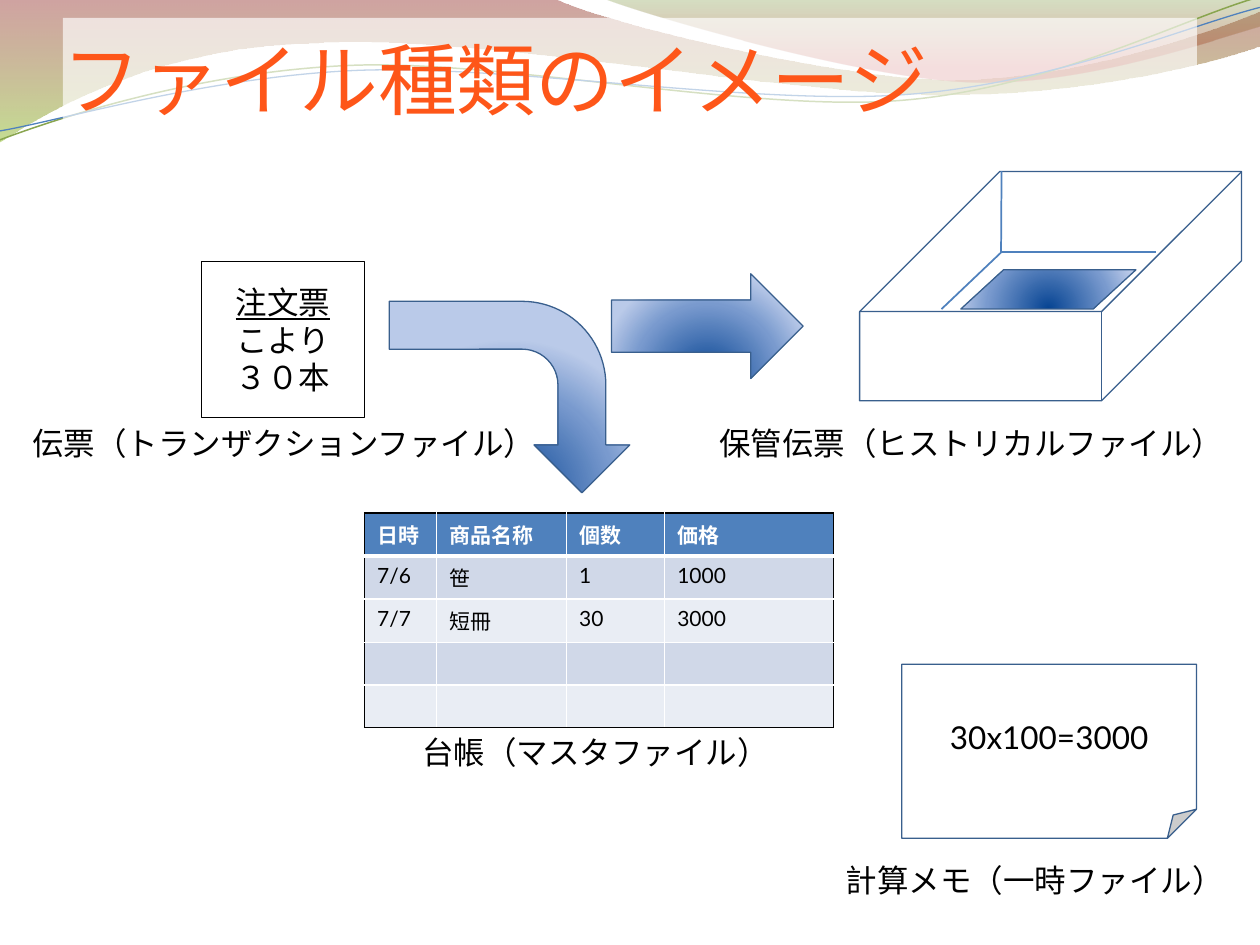
from lxml import etree
from pptx import Presentation
from pptx.dml.color import RGBColor
from pptx.enum.shapes import MSO_CONNECTOR, MSO_SHAPE
from pptx.enum.text import MSO_ANCHOR, MSO_AUTO_SIZE, PP_ALIGN
from pptx.oxml import parse_xml
from pptx.oxml.ns import qn
from pptx.util import Cm, Pt

CENTER, LEFT = PP_ALIGN.CENTER, PP_ALIGN.LEFT
MIDDLE, BOTTOM = MSO_ANCHOR.MIDDLE, MSO_ANCHOR.BOTTOM
NAMESPACE = "http://schemas.openxmlformats.org/drawingml/2006/main"
BODY_FONT, TITLE_FONT = "Lato", "Noto Sans CJK JP"
COLORS = {
    "title": "FE5619", "black": "000000", "white": "FFFFFF",
    "outline": "395F8D", "blue": "4F81BD", "green": "89A54F",
    "dark_band": "D0D8E8", "light_band": "E9EDF4",
}
WAVE_GRADIENTS = {
    "back": [(0, "973330", 45), (100, "95C238", 55)],
    "front": [(0, "769537", 30), (80, "BE3330", 45)],
}
GLOW_GRADIENT = [(0, "064493", 100), (68, "799ACE", 100), (100, "BACAE9", 100)]
DOWNWARD = '<a:lin ang="5400000" scaled="0"/>'
FROM_BELOW = ('<a:path path="circle"><a:fillToRect l="50000" t="130000" '
              'r="50000" b="-30000"/></a:path>')
BACK_WAVE = [
    (0, 0), (11.18, -0.03), (12.09, 0.43, 16.87, 1.6, 19.25, 1.6),
    (21.67, 1.6, 24.33, 0.66, 25.4, 0.23), (25.43, 0.91),
    (24.97, 1.12, 22.1, 1.93, 18.95, 1.91), (15.8, 1.91, 9.7, 0.71, 6.53, 0.86),
    (3.25, 0.91, 1.17, 2.11, -0.03, 2.87), (0, 0),
]
FRONT_WAVE = [
    (12.17, -0.03), (12.93, 0.28, 17.32, 1.57, 19.53, 1.65),
    (21.74, 1.75, 24.41, 0.81, 25.4, 0.53), (25.4, 0), (12.17, -0.03),
]
GREEN_WAVE = [
    (0, 2.82), (1.22, 2.36, 4.01, 1.45, 7.04, 1.32),
    (10.03, 1.19, 15.06, 2.26, 18.11, 2.03), (21.16, 1.8, 23.83, 0.38, 25.35, -0.05),
]
BLUE_WAVE = [
    (0, 2.64), (1.19, 2.44, 4.17, 1.55, 7.19, 1.42),
    (10.24, 1.3, 15.16, 2.13, 18.21, 1.91), (21.23, 1.7, 23.9, 0.53, 25.4, 0.15),
]
LEDGER = [
    ["日時", "商品名称", "個数", "価格"],
    ["7/6", "笹", "1", "1000"],
    ["7/7", "短冊", "30", "3000"],
    [""] * 4,
    [""] * 4,
]
LEDGER_WIDTHS = [1.45, 2.62, 1.98, 3.4]


def rgb(name):
    """Return a named colour."""
    return RGBColor.from_string(COLORS[name])


def set_gradient(shape, stops, direction):
    """Fill a shape with a gradient of (position, colour, opacity) stops."""
    stop_xml = "".join(
        f'<a:gs pos="{position * 1000}"><a:srgbClr val="{color}">'
        f'<a:alpha val="{opacity * 1000}"/></a:srgbClr></a:gs>'
        for position, color, opacity in stops)
    shape.fill.background()
    empty_fill = shape._element.spPr.find(qn("a:noFill"))
    empty_fill.getparent().replace(empty_fill, parse_xml(
        f'<a:gradFill xmlns:a="{NAMESPACE}" rotWithShape="1">'
        f'<a:gsLst>{stop_xml}</a:gsLst>{direction}</a:gradFill>'))


def set_outline(shape, color, width=0.75):
    """Give a shape a plain outline, or none, and no shadow."""
    shape.shadow.inherit = False
    if color:
        shape.line.color.rgb = rgb(color)
        shape.line.width = Pt(width)
    else:
        shape.line.fill.background()


def curve_segments(shape, segments):
    """Swap straight path segments for Bezier ones where control points exist."""
    path = next(shape._element.iter(qn("a:path")))
    steps = [step for step in path if step.tag != qn("a:close")]
    for step, segment in zip(steps, segments):
        if len(segment) == 2:
            continue
        curve = etree.Element(qn("a:cubicBezTo"))
        for x, y in zip(segment[::2], segment[1::2]):
            point = etree.SubElement(curve, qn("a:pt"))
            point.set("x", str(Cm(x) - shape.left))
            point.set("y", str(Cm(y) - shape.top))
        path.replace(step, curve)


def add_wave(slide, segments, gradient=None, color=None, width=0.75):
    """Draw a wave as a gradient area or as an open line."""
    points = [(Cm(segment[-2]), Cm(segment[-1])) for segment in segments]
    builder = slide.shapes.build_freeform(*points[0])
    builder.add_line_segments(points[1:], close=gradient is not None)
    shape = builder.convert_to_shape()
    curve_segments(shape, segments)
    set_outline(shape, color, width)
    if gradient:
        set_gradient(shape, gradient, DOWNWARD)
    else:
        shape.fill.background()


def add_shape(slide, kind, box, outline="outline", fill=None, gradient=None):
    """Add a preset shape with its box in centimetres."""
    shape = slide.shapes.add_shape(kind, *map(Cm, box))
    set_outline(shape, outline)
    if gradient:
        set_gradient(shape, gradient, FROM_BELOW)
    elif fill:
        shape.fill.solid()
        shape.fill.fore_color.rgb = rgb(fill)
    else:
        shape.fill.background()
    return shape


def write(frame, lines, size=18, color="black", font=BODY_FONT, align=CENTER):
    """Write one paragraph per line in a common style."""
    frame.text = "\n".join(lines)
    for paragraph in frame.paragraphs:
        paragraph.alignment = align
        paragraph.font.size = Pt(size)
        paragraph.font.name = font
        paragraph.font.color.rgb = rgb(color)


def add_title(slide, text):
    """Add the title on its translucent white panel."""
    panel = add_shape(slide, MSO_SHAPE.RECTANGLE, (1.27, 0.36, 22.86, 2.16), None, "white")
    color = panel._element.spPr.find(qn("a:solidFill"))[0]
    etree.SubElement(color, qn("a:alpha")).set("val", "66000")
    frame = panel.text_frame
    frame.vertical_anchor = BOTTOM
    frame.margin_left = frame.margin_right = frame.margin_bottom = 0
    write(frame, [text], 45, "title", TITLE_FONT, LEFT)


def add_caption(slide, text, left, top, width):
    """Add an unwrapped caption."""
    frame = slide.shapes.add_textbox(Cm(left), Cm(top), Cm(width), Cm(1.03)).text_frame
    frame.word_wrap = False
    frame.auto_size = MSO_AUTO_SIZE.SHAPE_TO_FIT_TEXT
    write(frame, [text], align=LEFT)


def add_line(slide, *ends):
    """Add a straight blue line without a shadow."""
    line = slide.shapes.add_connector(MSO_CONNECTOR.STRAIGHT, *map(Cm, ends))
    line.line.color.rgb = rgb("blue")
    line.line.width = Pt(1)
    etree.SubElement(line._element.spPr, qn("a:effectLst"))


def set_borders(cell, borders):
    """Set cell borders from (side, colour, width) entries."""
    properties = cell._tc.get_or_add_tcPr()
    for index, (side, color, width) in enumerate(borders):
        properties.insert(index, parse_xml(
            f'<a:ln{side} xmlns:a="{NAMESPACE}" w="{Pt(width)}"><a:solidFill>'
            f'<a:srgbClr val="{COLORS[color]}"/></a:solidFill></a:ln{side}>'))


def add_ledger(slide):
    """Add the ledger table with a black frame and white inner rules."""
    last_row, last_column = len(LEDGER) - 1, len(LEDGER_WIDTHS) - 1
    table = slide.shapes.add_table(
        len(LEDGER), len(LEDGER_WIDTHS), Cm(7.35), Cm(10.34),
        Cm(sum(LEDGER_WIDTHS)), Cm(0.86 * len(LEDGER))).table
    for column, width in zip(table.columns, LEDGER_WIDTHS):
        column.width = Cm(width)
    for i, values in enumerate(LEDGER):
        table.rows[i].height = Cm(0.86)
        for j, text in enumerate(values):
            cell = table.cell(i, j)
            write(cell.text_frame, [text], 12, "black" if i else "white", align=LEFT)
            paragraph = cell.text_frame.paragraphs[0]
            paragraph.font.bold = i == 0
            if not text:
                paragraph._p.get_or_add_endParaRPr().set("sz", "1200")
            cell.fill.solid()
            cell.fill.fore_color.rgb = rgb(
                "blue" if i == 0 else "dark_band" if i % 2 else "light_band")
            set_borders(cell, [
                ("L", "white" if j else "black", 1),
                ("R", "black" if j == last_column else "white", 1),
                ("T", "white" if i else "black", 3 if i == 1 else 1),
                ("B", "black" if i == last_row else "white", 1 if i else 3)])


def add_tray(slide):
    """Draw the open storage box with the slip inside."""
    add_shape(slide, MSO_SHAPE.CUBE, (17.33, 3.46, 7.7, 4.62)).adjustments[0] = 0.611
    slip = add_shape(slide, MSO_SHAPE.PARALLELOGRAM, (19.37, 5.44, 3.53, 0.79),
                     gradient=GLOW_GRADIENT)
    slip.adjustments[0] = 1.091
    add_line(slide, 20.19, 3.45, 20.18, 5.08)
    add_line(slide, 20.18, 5.08, 23.3, 5.08)
    add_line(slide, 20.19, 5.08, 18.98, 6.23)


def main():
    """Build and save the slide."""
    presentation = Presentation()
    presentation.slide_width, presentation.slide_height = Cm(25.4), Cm(19.05)
    slide = presentation.slides.add_slide(presentation.slide_layouts[6])
    add_wave(slide, BACK_WAVE, WAVE_GRADIENTS["back"])
    add_wave(slide, FRONT_WAVE, WAVE_GRADIENTS["front"])
    add_wave(slide, GREEN_WAVE, color="green", width=0.85)
    add_wave(slide, BLUE_WAVE, color="blue")
    add_title(slide, "ファイル種類のイメージ")
    add_ledger(slide)
    add_caption(slide, "台帳（マスタファイル）", 8.26, 14.66, 7.57)
    order = add_shape(slide, MSO_SHAPE.RECTANGLE, (4.06, 5.27, 3.29, 3.15), "black")
    write(order.text_frame, ["注文票", "こより", "３０本"])
    order.text_frame.paragraphs[0].font.underline = True
    add_caption(slide, "伝票（トランザクションファイル）", 0.4, 8.43, 10.77)
    add_tray(slide)
    add_caption(slide, "保管伝票（ヒストリカルファイル）", 14.25, 8.43, 10.77)
    bent_arrow = add_shape(slide, MSO_SHAPE.BENT_ARROW, (8.34, 5.58, 3.86, 4.85),
                           gradient=GLOW_GRADIENT)
    bent_arrow.rotation = 90
    add_shape(slide, MSO_SHAPE.RIGHT_ARROW, (12.33, 5.52, 3.86, 2.11), gradient=GLOW_GRADIENT)
    memo = add_shape(slide, MSO_SHAPE.FOLDED_CORNER, (18.18, 13.39, 5.94, 3.51), fill="white")
    memo.text_frame.vertical_anchor = MIDDLE
    write(memo.text_frame, ["30x100=3000"])
    add_caption(slide, "計算メモ（一時ファイル）", 16.8, 17.23, 8.2)
    presentation.save("out.pptx")


if __name__ == "__main__":
    main()
